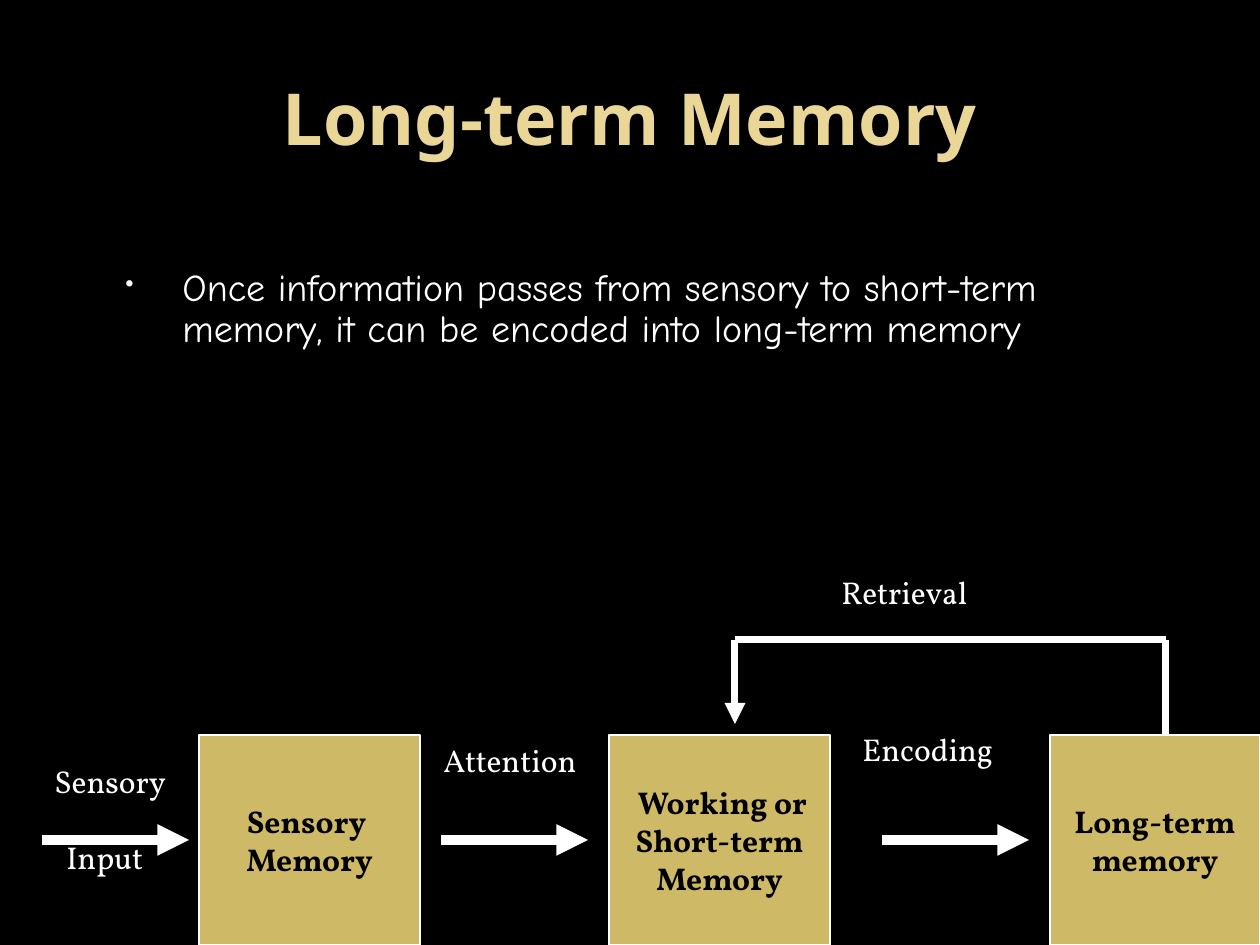
from lxml.etree import SubElement
from pptx import Presentation
from pptx.dml.color import RGBColor
from pptx.enum.shapes import MSO_CONNECTOR as CONN, MSO_SHAPE as SHAPE
from pptx.enum.text import MSO_ANCHOR as ANCHOR, PP_ALIGN as ALIGN
from pptx.oxml.ns import qn
from pptx.util import Pt

BLACK = RGBColor(0x00, 0x00, 0x00)
WHITE = RGBColor(0xFF, 0xFF, 0xFF)
GOLD = RGBColor(0xCE, 0xB9, 0x66)
CREAM = RGBColor(0xEA, 0xD6, 0x96)
PX = 914400 / 126

# Content; places are left, top, width, height in px
TITLE = ("Long-term Memory", (63, 38, 1134, 157))
POINT = ("Once information passes from sensory to short-term memory, "
         "it can be encoded into long-term memory", (94, 262, 1072, 147))
LABELS = [
    (["Sensory", "Input"], (42, 756, 161, 164)),
    (["Attention"], (431, 735, 184, 63)),
    (["Retrieval"], (829, 567, 252, 63)),
    (["Encoding"], (850, 724, 187, 63)),
]
STAGE_TOP, STAGE_H = 735, 210
STAGES = [
    (["Sensory ", "Memory"], SHAPE.RECTANGLE, 199, 221),
    ([" Working or", "Short-term", "Memory"], SHAPE.RECTANGLE, 609, 221),
    (["Long-term", "memory"], SHAPE.FLOWCHART_PROCESS, 1050, 210),
]
FLOW_Y, FLOW_LENGTH = 840, 147
FLOW_STARTS = [42, 441, 882]
RETRIEVAL_PATH = [(1166, 735), (1166, 640), (735, 640), (735, 724)]

TITLE_FONT = dict(name="Noto Sans", size=Pt(41), bold=True)
POINT_FONT = dict(name="Comic Neue", size=Pt(21.7))
LABEL_FONT = dict(name="Vollkorn", size=Pt(18))
STAGE_FONT = dict(LABEL_FONT, bold=True)


def emu(*lengths):
    return [round(n * PX) for n in lengths]


def write(tf, lines, font, color, align=ALIGN.LEFT, anchor=ANCHOR.TOP):
    tf.word_wrap = True
    tf.vertical_anchor = anchor
    for i, line in enumerate(lines):
        p = tf.add_paragraph() if i else tf.paragraphs[0]
        p.alignment = align
        r = p.add_run()
        r.text = line
        for key, value in font.items():
            setattr(r.font, key, value)
        r.font.color.rgb = color


def add_line(start, end, width, arrow=False):
    s = slide.shapes.add_connector(CONN.STRAIGHT, *emu(*start, *end))
    s.line.color.rgb = WHITE
    s.line.width = Pt(width)
    if arrow:
        SubElement(s.line._get_or_add_ln(), qn("a:tailEnd"), type="triangle")
    SubElement(s._element.spPr, qn("a:effectLst"))


prs = Presentation()
prs.slide_width, prs.slide_height = emu(1260, 945)
slide = prs.slides.add_slide(prs.slide_layouts[5])
slide.background.fill.solid()
slide.background.fill.fore_color.rgb = BLACK

# Title
text, place = TITLE
title = slide.shapes.title
title.left, title.top, title.width, title.height = emu(*place)
write(title.text_frame, [text], TITLE_FONT, CREAM, ALIGN.CENTER, ANCHOR.MIDDLE)

# Bullet point
text, place = POINT
tf = slide.shapes.add_textbox(*emu(*place)).text_frame
write(tf, [text], POINT_FONT, WHITE)
p = tf.paragraphs[0]
p.line_spacing = 0.9
pPr = p._p.get_or_add_pPr()
margin, indent = emu(76, -57)
pPr.set("marL", str(margin))
pPr.set("indent", str(indent))
SubElement(SubElement(pPr, qn("a:buClr")), qn("a:srgbClr"), val="F9F9F9")
SubElement(pPr, qn("a:buSzPct"), val="65000")
SubElement(pPr, qn("a:buChar"), char="•")

# Labels; a second line sits below the arrow, slightly indented
for lines, place in LABELS:
    tf = slide.shapes.add_textbox(*emu(*place)).text_frame
    write(tf, lines, LABEL_FONT, WHITE)
    for p in tf.paragraphs[1:]:
        p.space_before = Pt(21.7)
        p._p.get_or_add_pPr().set("marL", str(emu(12)[0]))

# Memory stages
for lines, kind, left, width in STAGES:
    s = slide.shapes.add_shape(kind, *emu(left, STAGE_TOP, width, STAGE_H))
    s.shadow.inherit = False
    s.fill.solid()
    s.fill.fore_color.rgb = GOLD
    s.line.color.rgb = WHITE
    s.line.width = Pt(1)
    write(s.text_frame, lines, STAGE_FONT, BLACK, ALIGN.CENTER, ANCHOR.MIDDLE)

# Flow arrows
for x in FLOW_STARTS:
    add_line((x, FLOW_Y), (x + FLOW_LENGTH, FLOW_Y), 6, arrow=True)

# Retrieval loop, with an arrowhead on its last leg
for start, end in zip(RETRIEVAL_PATH, RETRIEVAL_PATH[1:]):
    add_line(start, end, 4, arrow=end == RETRIEVAL_PATH[-1])

prs.save("out.pptx")
